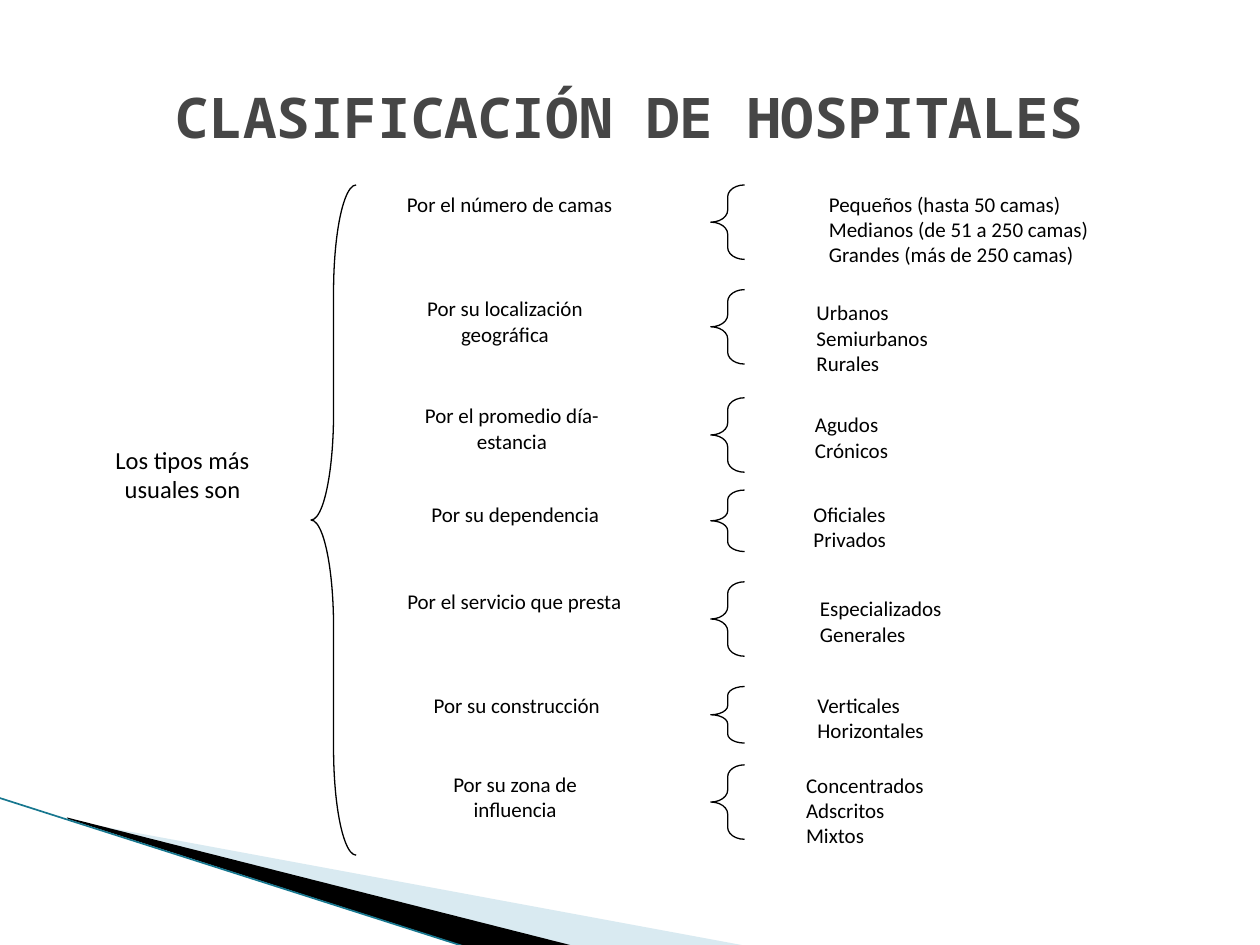
from lxml.etree import SubElement
from pptx import Presentation
from pptx.dml.color import RGBColor
from pptx.enum.shapes import MSO_CONNECTOR, MSO_SHAPE
from pptx.enum.text import MSO_ANCHOR, PP_ALIGN
from pptx.oxml.ns import qn
from pptx.util import Cm, Pt

COLORS = {"title": "464646", "ink": "000000", "band": "A0CBDC", "edge": "17778F"}
BRACE_ARC = 0.16  # arc size as a share of the brace height

# top, brace height, (label, left, top offset, width), (types, left, top offset, width)
CRITERIA = [
    (3.73, 1.5, ("Por el número de camas", 7.95, 0, 4.65),
     (["Pequeños (hasta 50 camas)", "Medianos (de 51 a 250 camas)",
       "Grandes (más de 250 camas)"], 16.46, 0, 6.86)),
    (5.84, 1.5, ("Por su localización geográfica", 7.82, 0, 4.72),
     (["Urbanos", "Semiurbanos", "Rurales"], 16.21, 0.08, 3.23)),
    (8.02, 1.5, ("Por el promedio día-estancia", 7.82, -0.02, 5.0),
     (["Agudos", "Crónicos"], 16.18, 0.16, 2.31)),
    (9.88, 1.24, ("Por su dependencia", 8.0, 0.1, 4.78),
     (["Oficiales", "Privados"], 16.15, 0.1, 2.31)),
    (11.73, 1.5, ("Por el servicio que presta", 7.92, 0, 4.9),
     (["Especializados", "Generales"], 16.28, 0.16, 3.48)),
    (13.84, 1.14, ("Por su construcción", 8.03, 0, 4.78),
     (["Verticales", "Horizontales"], 16.23, 0, 3.1)),
    (15.42, 1.5, ("Por su zona de influencia", 8.15, 0, 4.47),
     (["Concentrados", "Adscritos", "Mixtos"], 16.0, 0.02, 3.38)),
]


def rgb(name):
    return RGBColor.from_string(COLORS[name])


def add_text(page, lines, left, top, width, height, size, align=PP_ALIGN.CENTER,
             font="Calibri", color="ink", bold=False, anchor=MSO_ANCHOR.TOP):
    box = page.shapes.add_textbox(Cm(left), Cm(top), Cm(width), Cm(height))
    frame = box.text_frame
    frame.word_wrap = True
    frame.vertical_anchor = anchor
    for index, line in enumerate(lines):
        para = frame.add_paragraph() if index else frame.paragraphs[0]
        para.alignment = align
        span = para.add_run()
        span.text = line
        span.font.name = font
        span.font.size = Pt(size)
        span.font.bold = bold
        span.font.color.rgb = rgb(color)


def add_brace(page, left, top, width, height):
    brace = page.shapes.add_shape(MSO_SHAPE.LEFT_BRACE, Cm(left), Cm(top),
                                  Cm(width), Cm(height))
    brace.shadow.inherit = False
    brace.fill.background()
    brace.line.color.rgb = rgb("ink")
    brace.line.width = Pt(0.75)
    brace.adjustments[0] = BRACE_ARC * height / width
    brace.adjustments[1] = 0.5


def add_wedge(page, left, top, points, color, opacity=100):
    corners = [(Cm(left + x), Cm(top + y)) for x, y in points]
    builder = page.shapes.build_freeform(*corners[0])
    builder.add_line_segments(corners[1:], close=True)
    wedge = builder.convert_to_shape()
    wedge.shadow.inherit = False
    wedge.fill.solid()
    wedge.fill.fore_color.rgb = rgb(color)
    wedge.line.fill.background()
    if opacity < 100:
        tint = wedge.fill._xPr.find(qn("a:solidFill"))[0]
        SubElement(tint, qn("a:alpha")).set("val", str(opacity * 1000))


def add_corner(page, left, top):
    """Draw the sloping bands at the foot of the page."""
    add_wedge(page, left, top, [(1.4, 0.46), (15.11, 3), (11.58, 3), (1.4, 0.43)],
              "band", 40)
    add_wedge(page, left, top, [(1.35, 0.4), (11.61, 3), (9.45, 3.02), (1.37, 0.43)],
              "ink")
    edge = page.shapes.add_connector(MSO_CONNECTOR.STRAIGHT, Cm(left - 0.03), Cm(top),
                                     Cm(left + 9.42), Cm(top + 3.02))
    edge.line.color.rgb = rgb("edge")
    edge.line.width = Pt(0.95)
    SubElement(edge._element.spPr, qn("a:effectLst"))


def add_criterion(page, top, height, label, types):
    text, left, offset, width = label
    add_text(page, [text], left, top + offset, width, 1.5, 12)
    add_brace(page, 14.33, top, 0.68, height)
    lines, left, offset, width = types
    add_text(page, lines, left, top + offset, width, 0.26 + 0.54 * len(lines), 12,
             PP_ALIGN.JUSTIFY)


def main():
    deck = Presentation()
    deck.slide_width, deck.slide_height = Cm(25.4), Cm(19.05)
    page = deck.slides.add_slide(deck.slide_layouts[6])
    add_corner(page, 0, 16.08)
    add_text(page, ["CLASIFICACIÓN DE HOSPITALES"], 1.27, 0.76, 22.86, 3.18, 32,
             font="Noto Sans Mono", color="title", bold=True, anchor=MSO_ANCHOR.MIDDLE)
    add_text(page, ["Los tipos más usuales son"], 1.9, 8.84, 3.56, 2.44, 14)
    add_brace(page, 6.27, 3.73, 0.91, 13.51)
    for criterion in CRITERIA:
        add_criterion(page, *criterion)
    deck.save("out.pptx")


if __name__ == "__main__":
    main()
